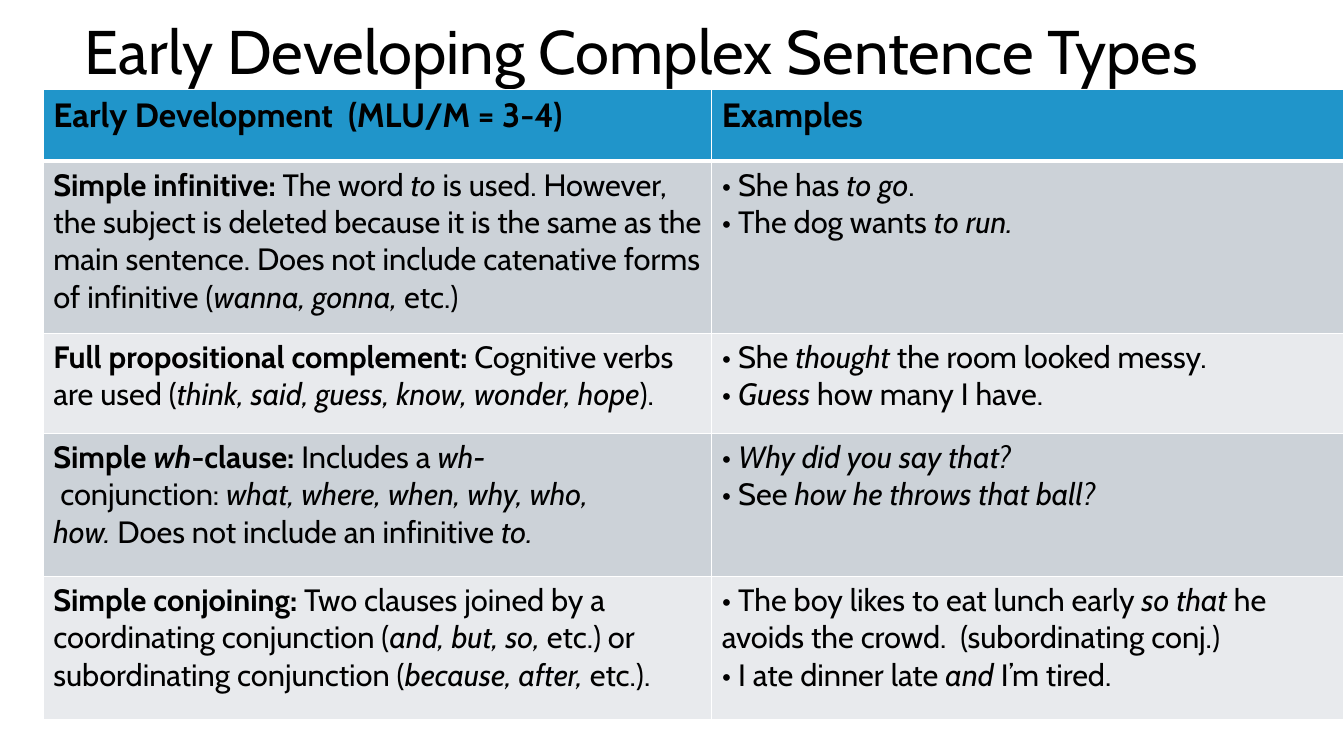
from pptx import Presentation
from pptx.dml.color import RGBColor
from pptx.enum import text
from pptx.oxml import parse_xml
from pptx.oxml.ns import nsdecls
from pptx.util import Inches, Pt

FONT = "Cabin"
BLACK = RGBColor(0x00, 0x00, 0x00)
HEADER_BLUE = RGBColor(0x20, 0x95, 0xCA)
BAND_DARK = RGBColor(0xCC, 0xD2, 0xD8)
BAND_LIGHT = RGBColor(0xE8, 0xEA, 0xED)
WHITE = RGBColor(0xFF, 0xFF, 0xFF)

COLUMN_WIDTHS = [6.63, 6.27]
ROW_HEIGHTS = [0.71, 1.71, 0.99, 1.42, 1.42]

# Markup: * switches bold, _ switches italic, ~ is a no-break space.
ROWS = [
    ("*Early Development  (MLU/M = 3-4)", "*Examples"),
    ("*Simple infinitive: *The word~_to_~is used. However, the subject is "
     "deleted because it is the same as the main sentence. Does not include "
     "catenative forms of infinitive (_wanna, gonna,_~etc.)",
     "• She has _to go_.\n• The dog wants _to run."),
    ("*Full propositional complement: *Cognitive verbs are used "
     "(_think, said, guess, know, wonder, hope_).",
     "• She _thought _the room looked messy.\n• _Guess _how many I have."),
    ("*Simple~_wh_-clause: *Includes a~_wh-_~conjunction:~"
     "_what, where, when, why, who, how._~Does not include an infinitive~_to.",
     "• _Why did you say that?\n• See_ how he throws that ball?"),
    ("*Simple conjoining: *Two clauses joined by a coordinating conjunction "
     "(_and, but, so,_~etc.) or subordinating conjunction "
     "(_because, after,_~etc.).",
     "• The boy likes to eat lunch early _so that _he avoids the crowd.  "
     "(subordinating conj.)\n• I ate dinner late _and _I’m tired."),
]


def write_marked(para, marked, size):
    """Fill a paragraph with runs, switching bold at * and italic at _."""
    for b, bold_part in enumerate(marked.replace("~", chr(160)).split("*")):
        for i, part in enumerate(bold_part.split("_")):
            if not part:
                continue
            span = para.add_run()
            span.text = part
            span.font.name = FONT
            span.font.size = Pt(size)
            span.font.color.rgb = BLACK
            span.font.bold = b % 2 == 1
            span.font.italic = i % 2 == 1


def set_borders(cell, bottom_width):
    properties = cell._tc.get_or_add_tcPr()
    widths = {"lnL": 1, "lnR": 1, "lnT": 1, "lnB": bottom_width}
    for position, (side, width) in enumerate(widths.items()):
        properties.insert(position, parse_xml(
            f'<a:{side} {nsdecls("a")} w="{Pt(width)}"><a:solidFill>'
            f'<a:srgbClr val="{WHITE}"/></a:solidFill></a:{side}>'))


deck = Presentation()
deck.slide_width = Inches(13.33)
deck.slide_height = Inches(7.5)
page = deck.slides.add_slide(deck.slide_layouts[5])

title = page.shapes.title
title.left, title.top = Inches(0.74), Inches(0)
title.width, title.height = Inches(12), Inches(1.08)
title.text_frame.word_wrap = True
title.text_frame.vertical_anchor = text.MSO_ANCHOR.MIDDLE
heading = title.text_frame.paragraphs[0]
heading.alignment = text.PP_ALIGN.LEFT
heading.line_spacing = 0.9
write_marked(heading, "Early Developing Complex Sentence Types", 44)

table = page.shapes.add_table(
    len(ROWS), len(COLUMN_WIDTHS), Inches(0.43), Inches(0.89),
    Inches(sum(COLUMN_WIDTHS)), Inches(sum(ROW_HEIGHTS))).table
for column, width in zip(table.columns, COLUMN_WIDTHS):
    column.width = Inches(width)

for r, (height, entries) in enumerate(zip(ROW_HEIGHTS, ROWS)):
    table.rows[r].height = Inches(height)
    is_header = r == 0
    band = HEADER_BLUE if is_header else BAND_DARK if r % 2 else BAND_LIGHT
    for c, entry in enumerate(entries):
        cell = table.cell(r, c)
        cell.fill.solid()
        cell.fill.fore_color.rgb = band
        set_borders(cell, 3 if is_header else 1)
        frame = cell.text_frame
        for n, line in enumerate(entry.split("\n")):
            para = frame.add_paragraph() if n else frame.paragraphs[0]
            write_marked(para, line, 24 if is_header else 22)

deck.save("out.pptx")
